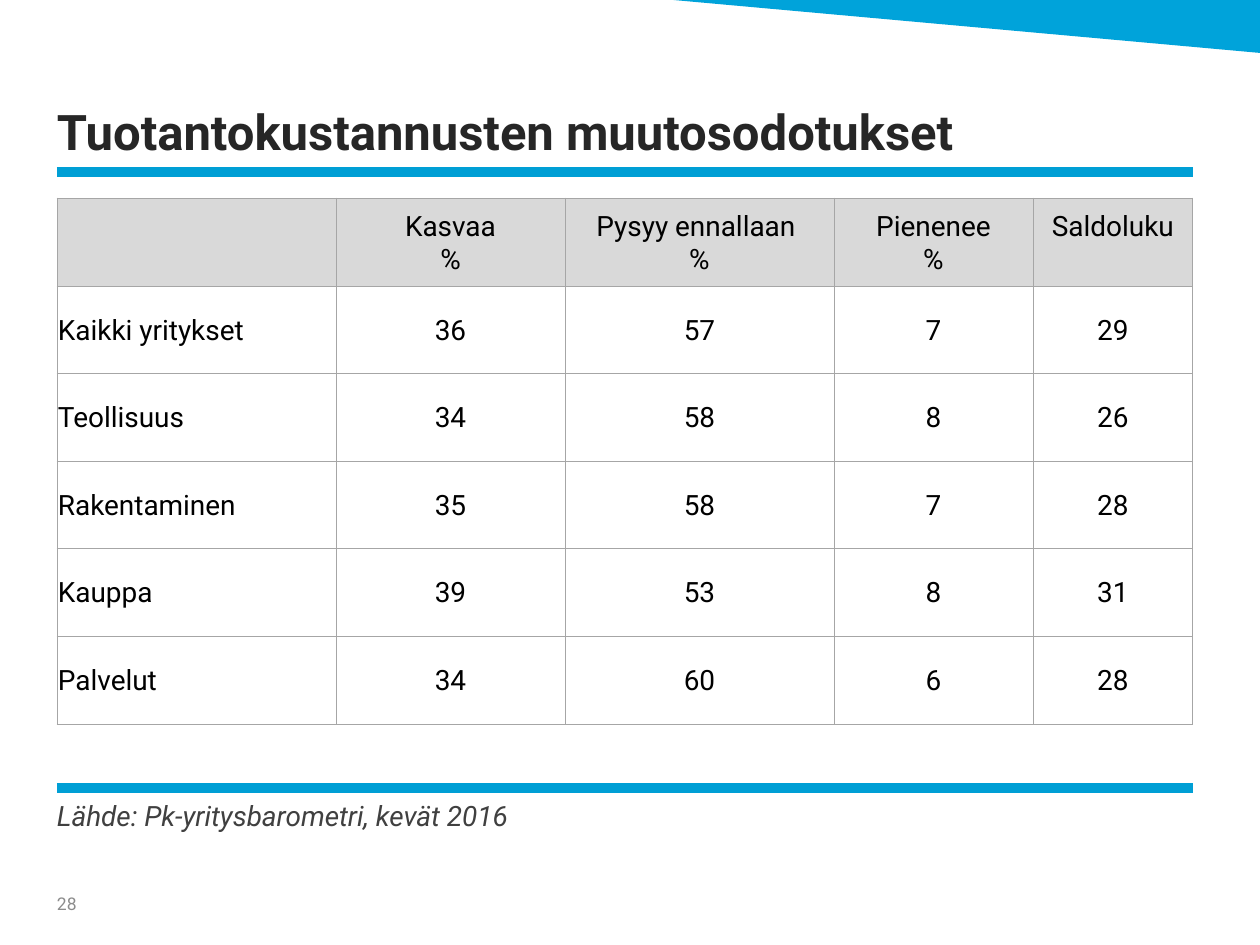
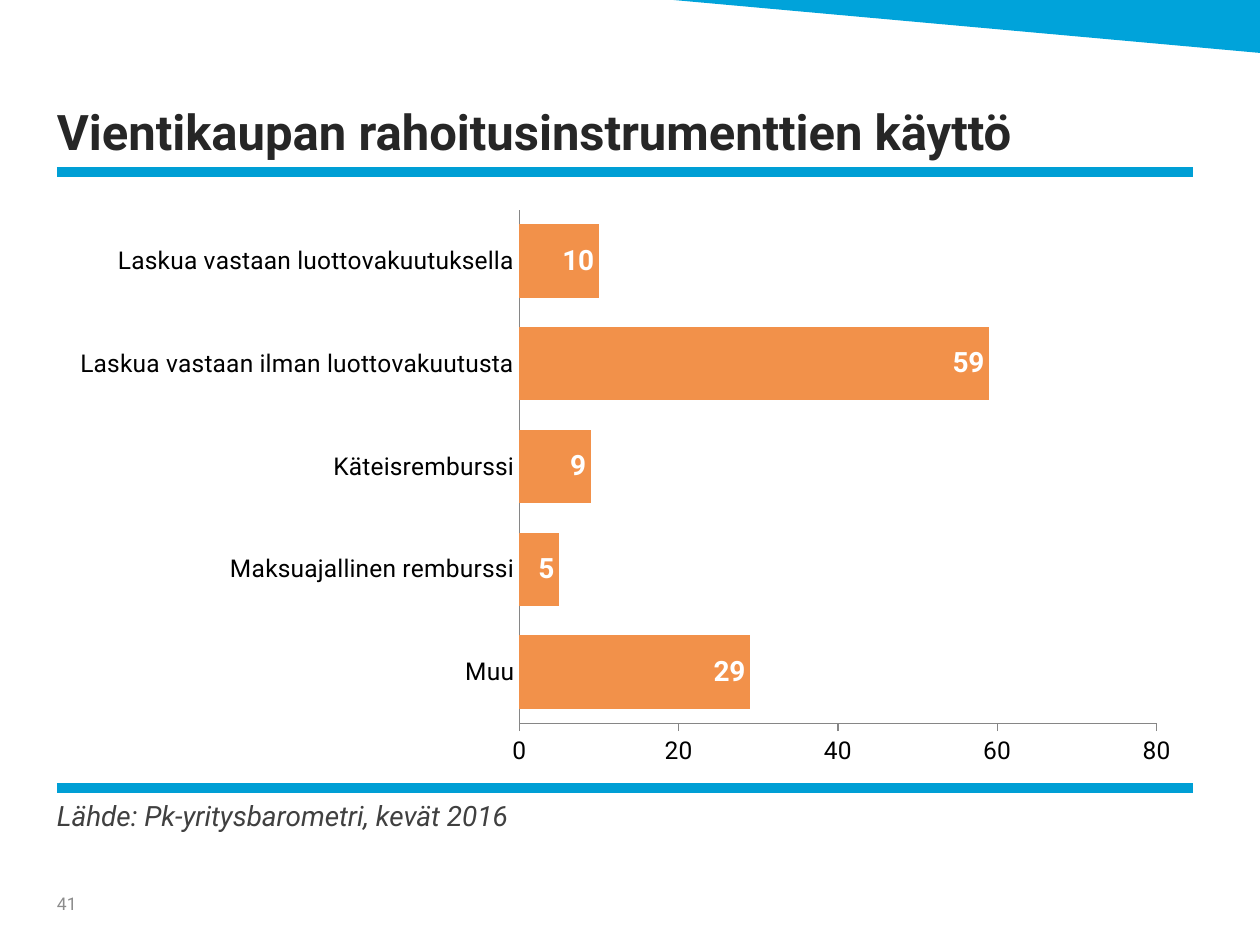
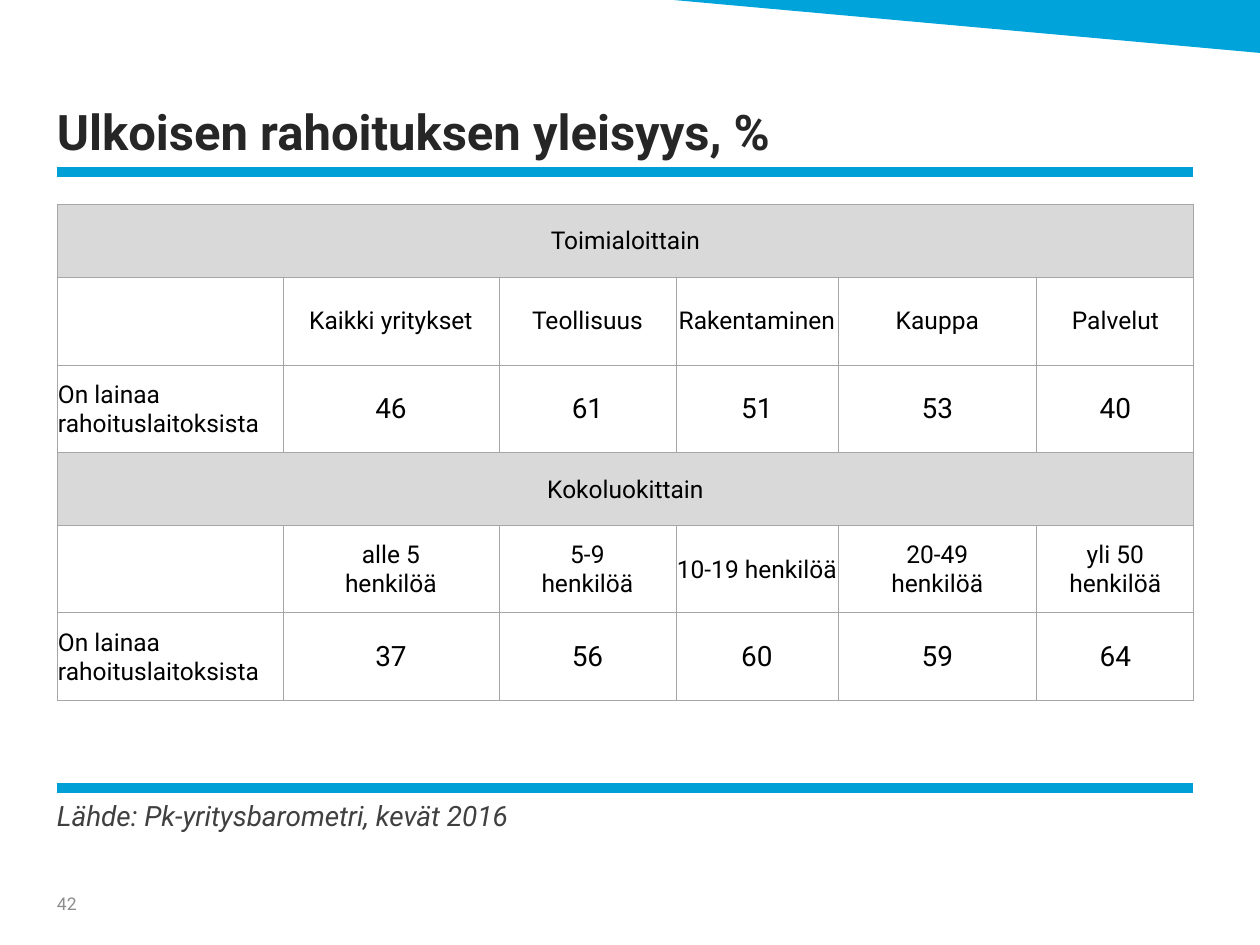
from lxml.etree import SubElement
from pptx import Presentation
from pptx.chart.data import CategoryChartData
from pptx.dml.color import RGBColor
from pptx.enum.chart import XL_CHART_TYPE, XL_LABEL_POSITION, XL_TICK_MARK
from pptx.enum.shapes import MSO_CONNECTOR
from pptx.enum.text import MSO_ANCHOR, MSO_AUTO_SIZE, PP_ALIGN
from pptx.oxml import parse_xml
from pptx.oxml.ns import nsdecls, qn
from pptx.util import Emu, Pt

# Shared look
FONT = "Roboto"
CYAN = RGBColor(0x00, 0xA3, 0xDA)
RULE_BLUE = RGBColor(0x00, 0x9F, 0xD5)
ORANGE = RGBColor(0xF2, 0x91, 0x4A)
BLACK = RGBColor(0x00, 0x00, 0x00)
WHITE = RGBColor(0xFF, 0xFF, 0xFF)
TITLE_GRAY = RGBColor(0x26, 0x26, 0x26)
SOURCE_GRAY = RGBColor(0x40, 0x40, 0x40)
PAGE_GRAY = RGBColor(0x8C, 0x8C, 0x8C)
HEADER_FILL = RGBColor(0xD9, 0xD9, 0xD9)
BORDER_GRAY = RGBColor(0xA6, 0xA6, 0xA6)
AXIS_GRAY = RGBColor(0x86, 0x86, 0x86)

PX_PER_INCH = 126
SLIDE_W, SLIDE_H = 1260, 945
LEFT, WIDTH = 57, 1136
SOURCE = "Lähde: Pk-yritysbarometri, kevät 2016"


def px(n):
    return Emu(round(n * 914400 / PX_PER_INCH))


def set_font(font, size, color, bold=False, italic=False):
    font.name, font.size, font.bold, font.italic = FONT, Pt(size), bold, italic
    font.color.rgb = color


def place(sp, x, y, w, h):
    sp.left, sp.top, sp.width, sp.height = px(x), px(y), px(w), px(h)


def fill_frame(tf, text, margins, anchor, size, color, **style):
    """Write one left-aligned paragraph into a text frame."""
    tf.word_wrap = True
    tf.auto_size = MSO_AUTO_SIZE.NONE
    tf.vertical_anchor = anchor
    (tf.margin_left, tf.margin_top,
     tf.margin_right, tf.margin_bottom) = [px(m) for m in margins]
    p = tf.paragraphs[0]
    p.alignment = PP_ALIGN.LEFT
    p.space_before = Pt(0)
    r = p.add_run()
    r.text = text
    set_font(r.font, size, color, **style)
    return p


def add_wedge(s):
    builder = s.shapes.build_freeform(px(673), 0)
    builder.add_line_segments([(px(SLIDE_W), 0), (px(SLIDE_W), px(53))])
    sp = builder.convert_to_shape()
    sp.shadow.inherit = False
    sp.fill.solid()
    sp.fill.fore_color.rgb = CYAN
    sp.line.fill.background()


def add_rule(s, y):
    line = s.shapes.add_connector(MSO_CONNECTOR.STRAIGHT, px(LEFT), px(y),
                                  px(LEFT + WIDTH), px(y))
    line.line.color.rgb = RULE_BLUE
    line.line.width = Pt(6)
    SubElement(line._element.spPr, qn("a:effectLst"))


def add_slide(prs, title, page):
    """Add a slide with title, wedge, rules, source line and page number."""
    s = prs.slides.add_slide(prs.slide_layouts[1])
    add_wedge(s)
    add_rule(s, 172)
    add_rule(s, 788)

    heading, source = s.shapes.title, s.placeholders[1]
    place(heading, LEFT, 42, 1134, 118)
    fill_frame(heading.text_frame, title, (0, 0, 0, 0), MSO_ANCHOR.BOTTOM,
               28, TITLE_GRAY, bold=True)

    place(source, LEFT, 793, WIDTH, 54)
    p = fill_frame(source.text_frame, SOURCE, (0, 6, 0, 6), MSO_ANCHOR.TOP,
                   16, SOURCE_GRAY, italic=True)
    pPr = p._p.get_or_add_pPr()
    pPr.set("marL", "0")
    pPr.set("indent", "0")
    SubElement(pPr, qn("a:buNone"))

    number = s.shapes.add_textbox(px(LEFT), px(879), px(59), px(50))
    fill_frame(number.text_frame, str(page), (0, 6, 13, 6), MSO_ANCHOR.MIDDLE,
               10, PAGE_GRAY)
    return s


def set_borders(cell):
    tcPr = cell._tc.get_or_add_tcPr()
    for i, side in enumerate(("lnL", "lnR", "lnT", "lnB")):
        tcPr.insert(i, parse_xml(
            f'<a:{side} {nsdecls("a")} w="{Pt(0.5)}"><a:solidFill>'
            f'<a:srgbClr val="{BORDER_GRAY}"/></a:solidFill></a:{side}>'))


def fill_cell(cell, text, size, align, shaded):
    cell.fill.solid()
    cell.fill.fore_color.rgb = HEADER_FILL if shaded else WHITE
    set_borders(cell)
    cell.vertical_anchor = MSO_ANCHOR.MIDDLE
    cell.margin_left = cell.margin_top = cell.margin_right = px(1)
    cell.margin_bottom = 0
    tf = cell.text_frame
    for i, line in enumerate(text.split("\n") if text else []):
        p = tf.add_paragraph() if i else tf.paragraphs[0]
        p.alignment = align
        r = p.add_run()
        r.text = line
        set_font(r.font, size, BLACK)


def add_grid(s, top, col_widths, row_heights, rows, label_size, shaded_rows):
    """Add a table; a row holding a single text spans all columns."""
    frame = s.shapes.add_table(len(rows), len(col_widths), px(LEFT), px(top),
                               px(sum(col_widths)), px(sum(row_heights)))
    table = frame.table
    table.first_row = table.horz_banding = False
    for column, w in zip(table.columns, col_widths):
        column.width = px(w)
    for row, h in zip(table.rows, row_heights):
        row.height = px(h)
    last = len(col_widths) - 1
    for i, texts in enumerate(rows):
        if len(texts) == 1:
            table.cell(i, 0).merge(table.cell(i, last))
        for j in range(last + 1):
            text = texts[j] if j < len(texts) else ""
            is_label = j == 0 and len(texts) > 1
            fill_cell(table.cell(i, j), text,
                      16 if text.isdigit() else label_size,
                      PP_ALIGN.LEFT if is_label else PP_ALIGN.CENTER,
                      i in shaded_rows)
    return table


def style_axis(axis, tick_mark):
    axis.has_major_gridlines = False
    axis.major_tick_mark = tick_mark
    axis.minor_tick_mark = XL_TICK_MARK.NONE
    axis.format.line.color.rgb = AXIS_GRAY
    set_font(axis.tick_labels.font, 14, BLACK)


def add_bar_chart(s, categories, values):
    data = CategoryChartData()
    data.categories = categories
    data.add_series("Series 1", values)
    chart = s.shapes.add_chart(XL_CHART_TYPE.BAR_CLUSTERED, px(LEFT), px(198),
                               px(WIDTH), px(581), data).chart
    chart.has_legend = chart.has_title = False
    set_font(chart.font, 10, BLACK)

    # Axes: first category on top, value axis at the bottom
    cat_axis, val_axis = chart.category_axis, chart.value_axis
    style_axis(cat_axis, XL_TICK_MARK.NONE)
    style_axis(val_axis, XL_TICK_MARK.OUTSIDE)
    cat_axis.reverse_order = True
    val_axis._element.find(qn("c:crosses")).set("val", "max")
    val_axis.minimum_scale, val_axis.maximum_scale = 0, 80
    val_axis.major_unit = 20

    # Bars and their labels
    plot = chart.plots[0]
    plot.gap_width = 40
    plot.vary_by_categories = False
    series = plot.series[0]
    series.format.fill.solid()
    series.format.fill.fore_color.rgb = ORANGE
    labels = series.data_labels
    labels.show_value = True
    labels.position = XL_LABEL_POSITION.INSIDE_END
    set_font(labels.font, 16, WHITE, bold=True)

    # Fixed plot area inside the chart frame
    plot_area = chart._chartSpace.chart.plotArea
    for old in plot_area.findall(qn("c:layout")):
        plot_area.remove(old)
    layout = parse_xml(f'<c:layout {nsdecls("c")}/>')
    manual = SubElement(layout, qn("c:manualLayout"))
    for tag, val in (("layoutTarget", "inner"), ("xMode", "edge"),
                     ("yMode", "edge"), ("x", 0.407), ("y", 0.02),
                     ("w", 0.561), ("h", 0.885)):
        SubElement(manual, qn(f"c:{tag}")).set("val", str(val))
    plot_area.insert(0, layout)


def main():
    prs = Presentation()
    prs.slide_width, prs.slide_height = px(SLIDE_W), px(SLIDE_H)

    # Expected changes in production costs
    s = add_slide(prs, "Tuotantokustannusten muutosodotukset", 28)
    table = add_grid(s, 198, [279, 229, 269, 199, 160],
                     [88, 88, 88, 87, 88, 88], [
        ["", "Kasvaa\n%", "Pysyy ennallaan \n%", "Pienenee\n%", "Saldoluku"],
        ["Kaikki yritykset", "36", "57", "7", "29"],
        ["Teollisuus", "34", "58", "8", "26"],
        ["Rakentaminen", "35", "58", "7", "28"],
        ["Kauppa", "39", "53", "8", "31"],
        ["Palvelut", "34", "60", "6", "28"],
    ], 16, {0})
    # Header texts share their first line
    for cell in table.rows[0].cells:
        cell.vertical_anchor = MSO_ANCHOR.TOP
        cell.margin_top = px(13)

    # Financing instruments in export trade
    s = add_slide(prs, "Vientikaupan rahoitusinstrumenttien käyttö", 41)
    add_bar_chart(s, ["Laskua vastaan luottovakuutuksella",
                      "Laskua vastaan ilman luottovakuutusta",
                      "Käteisremburssi", "Maksuajallinen remburssi", "Muu"],
                  [10, 59, 9, 5, 29])

    # External financing by industry and by size
    s = add_slide(prs, "Ulkoisen rahoituksen yleisyys, %", 42)
    loan = "On lainaa rahoituslaitoksista"
    add_grid(s, 204, [226, 216, 177, 162, 199, 157],
             [73, 88, 88, 73, 87, 88], [
        ["Toimialoittain"],
        ["", "Kaikki yritykset", "Teollisuus", "Rakentaminen", "Kauppa",
         "Palvelut"],
        [loan, "46", "61", "51", "53", "40"],
        ["Kokoluokittain"],
        ["", "alle 5\nhenkilöä", "5-9\nhenkilöä", "10-19 henkilöä",
         "20-49\nhenkilöä", "yli 50\nhenkilöä"],
        [loan, "37", "56", "60", "59", "64"],
    ], 14, {0, 3})

    prs.save("out.pptx")


if __name__ == "__main__":
    main()
